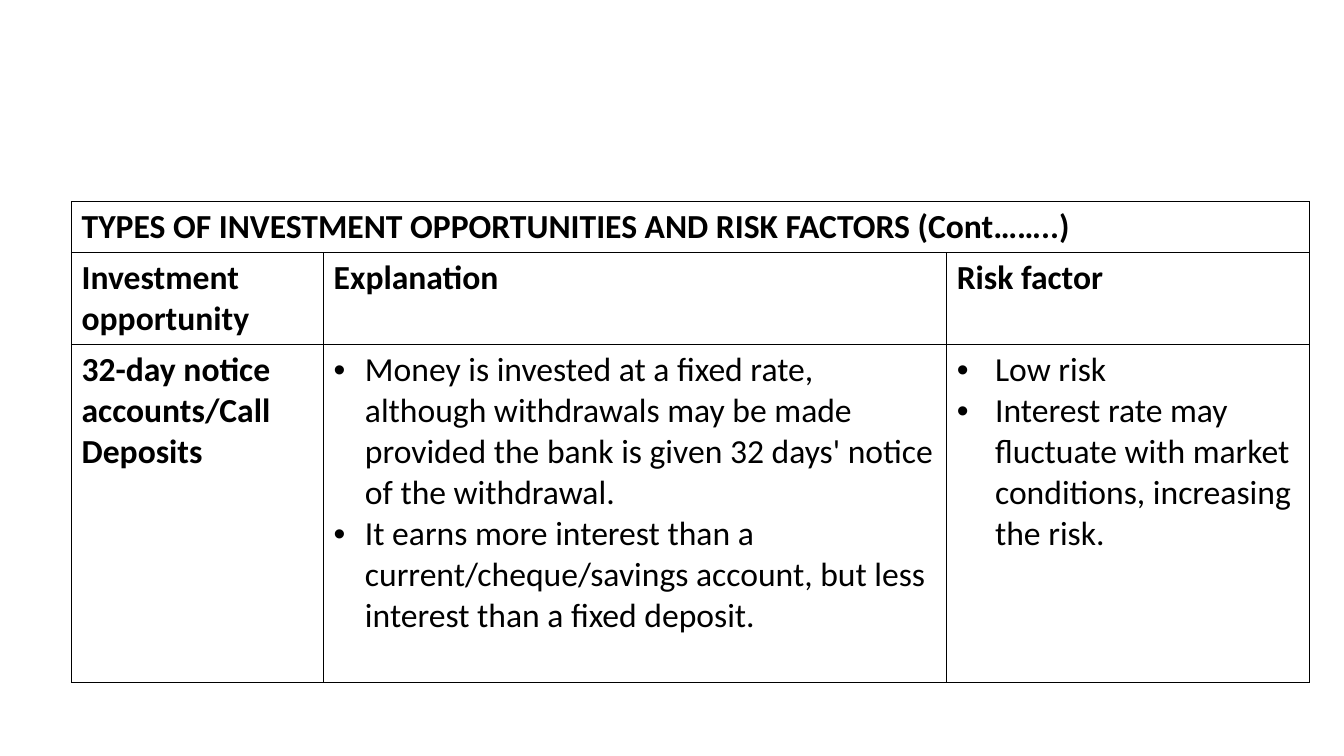
import pptx
import pptx.util
import pptx.dml.color
import pptx.oxml
import pptx.oxml.ns
from pptx.util import Inches

COLORS = {"ink": "000000", "border": "000000"}
FONT = "Calibri"
COL_WIDTHS = [2.5, 6.18, 3.6]
ROW_HEIGHTS = [0.5, 0.91, 3.35]
BULLET_INDENTS = {1: 0.31, 2: 0.38}
TITLE = "TYPES OF INVESTMENT OPPORTUNITIES AND RISK FACTORS (Cont……..)"
ROWS = [
    [[TITLE], [], []],
    [["Investment opportunity"], ["Explanation"], ["Risk factor"]],
    [
        ["32-day notice accounts/Call Deposits"],
        [
            "Money is invested at a fixed rate, although withdrawals may be made "
            "provided the bank is given 32 days' notice of the withdrawal.",
            "It earns more interest than a current/cheque/savings account, "
            "but less interest than a fixed deposit.",
        ],
        [
            "Low risk",
            "Interest rate may fluctuate with market conditions, increasing the risk.",
        ],
    ],
]


def set_borders(cell):
    tcPr = cell._tc.get_or_add_tcPr()
    for i, side in enumerate(("lnL", "lnR", "lnT", "lnB")):
        tcPr.insert(i, pptx.oxml.parse_xml(
            f'<a:{side} {pptx.oxml.ns.nsdecls("a")} w="{pptx.util.Pt(1)}">'
            f'<a:solidFill><a:srgbClr val="{COLORS["border"]}"/></a:solidFill>'
            f'</a:{side}>'))


def add_bullet(p, indent):
    pPr = p._p.get_or_add_pPr()
    pPr.set("marL", str(Inches(indent)))
    pPr.set("indent", str(-Inches(indent)))
    for xml in ('<a:buFont {} typeface="Arial"/>', '<a:buChar {} char="•"/>'):
        pPr.append(pptx.oxml.parse_xml(xml.format(pptx.oxml.ns.nsdecls("a"))))


def fill_cell(cell, texts, bold, indent=None):
    """Write one paragraph per text, bulleted when an indent is given."""
    cell.fill.background()
    set_borders(cell)
    tf = cell.text_frame
    for i, text in enumerate(texts):
        p = tf.add_paragraph() if i else tf.paragraphs[0]
        p.text = text
        if indent:
            add_bullet(p, indent)
        for r in p.runs:
            r.font.name = FONT
            r.font.size = pptx.util.Pt(24)
            r.font.bold = bold
            r.font.color.rgb = pptx.dml.color.RGBColor.from_string(COLORS["ink"])


def add_investment_table(s, left, top):
    table = s.shapes.add_table(
        len(ROWS), len(COL_WIDTHS), Inches(left), Inches(top),
        Inches(sum(COL_WIDTHS)), Inches(sum(ROW_HEIGHTS))).table
    table.first_row = False
    table.horz_banding = False
    for col, width in zip(table.columns, COL_WIDTHS):
        col.width = Inches(width)
    for row, height in zip(table.rows, ROW_HEIGHTS):
        row.height = Inches(height)
    table.cell(0, 0).merge(table.cell(0, len(COL_WIDTHS) - 1))
    for i, row in enumerate(ROWS):
        for j, texts in enumerate(row):
            is_heading = i < 2 or j == 0
            indent = None if is_heading else BULLET_INDENTS[j]
            fill_cell(table.cell(i, j), texts, is_heading, indent)


def main():
    prs = pptx.Presentation()
    prs.slide_width = Inches(13.33)
    prs.slide_height = Inches(7.5)
    s = prs.slides.add_slide(prs.slide_layouts[6])
    add_investment_table(s, 0.71, 2)
    prs.save("out.pptx")


if __name__ == "__main__":
    main()
